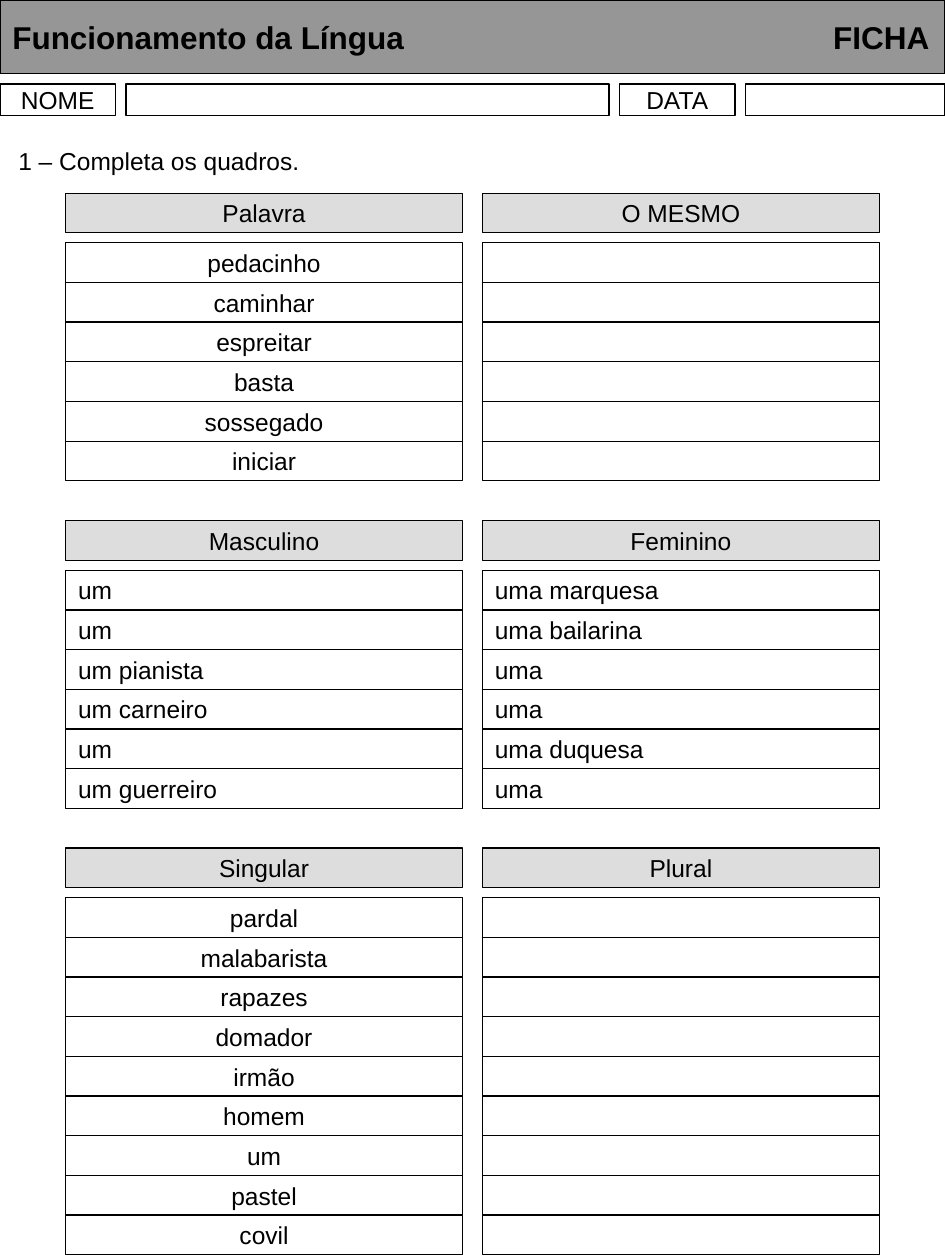
from dataclasses import dataclass
from typing import Optional

from lxml import etree
from pptx import Presentation
from pptx import util as u
from pptx.dml.color import RGBColor
from pptx.enum import shapes, text
from pptx.oxml import ns

BLACK = RGBColor(0x00, 0x00, 0x00)
BANNER_GREY = RGBColor(0x96, 0x96, 0x96)
HEADING_GREY = RGBColor(0xDD, 0xDD, 0xDD)
LEFT, CENTER = text.PP_ALIGN.LEFT, text.PP_ALIGN.CENTER

# Grid, in points
PAGE_WIDTH, PAGE_HEIGHT = 540, 720
COLUMN_LEFTS = (37.5, 275.7)
COLUMN_WIDTH = 226.8
ROW_HEIGHT = 22.68
HEADING_STEP = 28.35
FIRST_TOP = 110.4


@dataclass
class Box:
    left: float
    top: float
    width: float
    height: float
    label: str = ""
    fill: Optional[RGBColor] = None
    align: text.PP_ALIGN = CENTER


@dataclass
class Exercise:
    headings: tuple[str, str]
    rows: list[tuple[str, str]]
    align: text.PP_ALIGN = CENTER


FORM_FIELDS = [
    Box(0, 48, 66, 18, "NOME"),
    Box(72, 48, 276, 18),
    Box(354, 48, 66, 18, "DATA"),
    Box(426, 48, 114, 18),
]

SYNONYMS = ["pedacinho", "caminhar", "espreitar", "basta", "sossegado", "iniciar"]
SINGULARS = ["pardal", "malabarista", "rapazes", "domador", "irmão", "homem",
             "um", "pastel", "covil"]
EXERCISES = [
    Exercise(("Palavra", "O MESMO"), [(word, "") for word in SYNONYMS]),
    Exercise(("Masculino", "Feminino"), [
        ("um", "uma marquesa"),
        ("um", "uma bailarina"),
        ("um pianista", "uma"),
        ("um carneiro", "uma"),
        ("um", "uma duquesa"),
        ("um guerreiro", "uma"),
    ], LEFT),
    Exercise(("Singular", "Plural"), [(word, "") for word in SINGULARS]),
]


def write(shape, words: str, *, size: float = 14, bold: bool = False,
          align: text.PP_ALIGN = LEFT, spacing: float = 1.0):
    """Write one formatted line, centred vertically, and return its paragraph."""
    frame = shape.text_frame
    frame.word_wrap = True
    frame.vertical_anchor = text.MSO_ANCHOR.MIDDLE
    frame.margin_top = frame.margin_bottom = 0
    para = frame.paragraphs[0]
    para.alignment = align
    para.line_spacing = spacing
    span = para.add_run()
    span.text = words
    span.font.name = "Arial"
    span.font.size = u.Pt(size)
    span.font.bold = bold
    span.font.color.rgb = BLACK
    return para


def draw_box(page, box: Box):
    """Draw an outlined rectangle with its label, if it has one."""
    shape = page.shapes.add_shape(
        shapes.MSO_SHAPE.RECTANGLE, u.Pt(box.left), u.Pt(box.top),
        u.Pt(box.width), u.Pt(box.height))
    shape.shadow.inherit = False
    if box.fill is None:
        shape.fill.background()
    else:
        shape.fill.solid()
        shape.fill.fore_color.rgb = box.fill
    shape.line.color.rgb = BLACK
    shape.line.width = u.Pt(0.75)
    if box.label:
        write(shape, box.label, align=box.align)
    return shape


def draw_banner(page) -> None:
    """Draw the title bar; a right tab stop pushes the last word to the edge."""
    banner = draw_box(page, Box(0, 0, PAGE_WIDTH, 42, fill=BANNER_GREY))
    para = write(banner, "Funcionamento da Língua\tFICHA", size=18, bold=True)
    properties = para._p.get_or_add_pPr()
    stops = etree.SubElement(properties, ns.qn("a:tabLst"))
    etree.SubElement(stops, ns.qn("a:tab"), pos=str(u.Pt(524)), algn="r")


def draw_exercise(page, exercise: Exercise, top: float) -> float:
    """Draw both columns and return the top of the next exercise."""
    for column, left in enumerate(COLUMN_LEFTS):
        draw_box(page, Box(left, top, COLUMN_WIDTH, ROW_HEIGHT,
                           exercise.headings[column], HEADING_GREY))
        for index, row in enumerate(exercise.rows):
            row_top = top + HEADING_STEP + index * ROW_HEIGHT
            draw_box(page, Box(left, row_top, COLUMN_WIDTH, ROW_HEIGHT,
                               row[column], align=exercise.align))
    return top + HEADING_STEP + (len(exercise.rows) + 1) * ROW_HEIGHT


def main() -> None:
    deck = Presentation()
    deck.slide_width, deck.slide_height = u.Pt(PAGE_WIDTH), u.Pt(PAGE_HEIGHT)
    page = deck.slides.add_slide(deck.slide_layouts[6])

    # Title bar and form fields
    draw_banner(page)
    for field in FORM_FIELDS:
        draw_box(page, field)

    # Instruction
    instruction = page.shapes.add_textbox(u.Pt(3.4), u.Pt(68.4), u.Pt(282), u.Pt(42))
    write(instruction, "1 – Completa os quadros.", spacing=1.3)

    # Exercises, one row height apart
    top = FIRST_TOP
    for exercise in EXERCISES:
        top = draw_exercise(page, exercise, top)

    deck.save("out.pptx")


if __name__ == "__main__":
    main()
